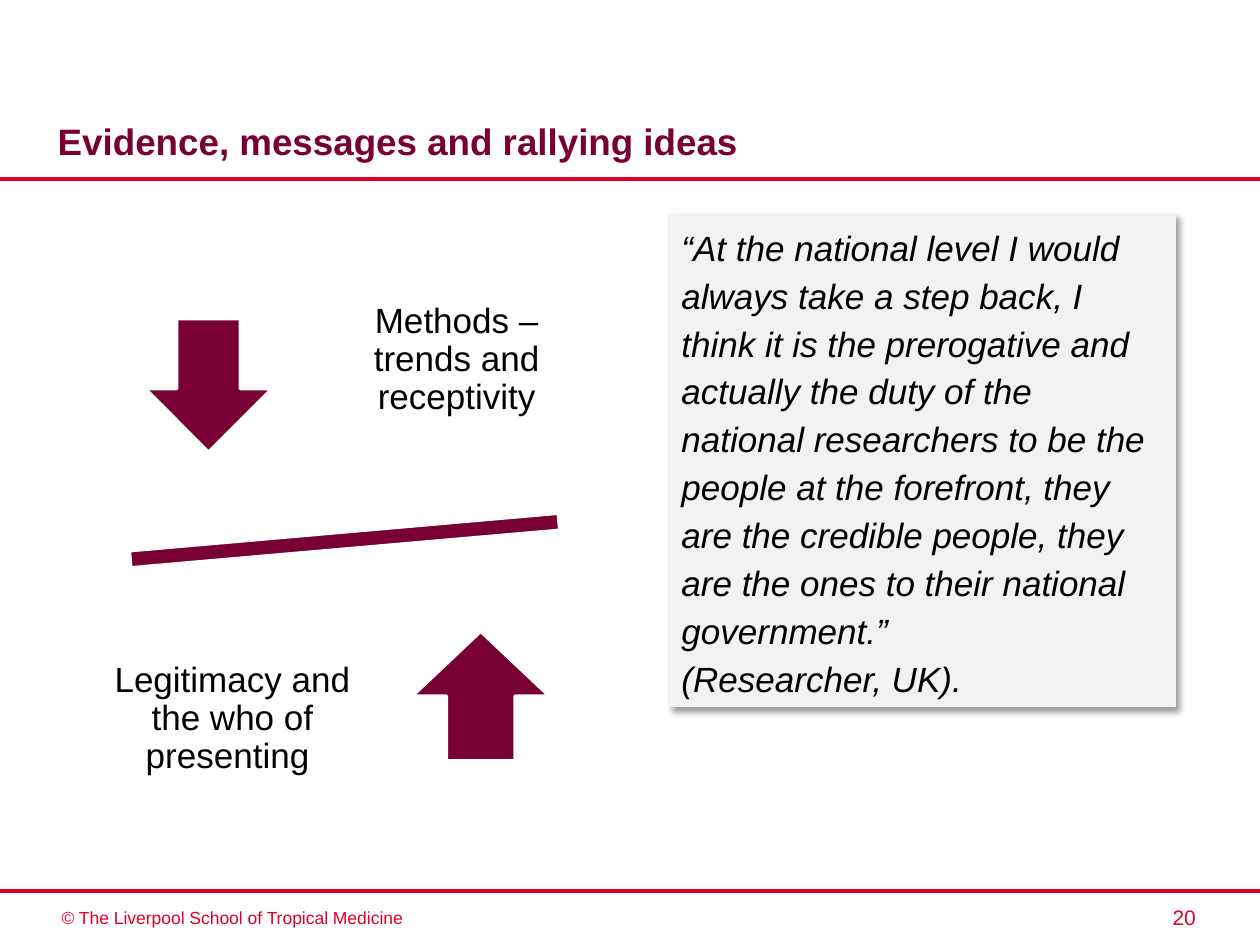
from lxml import etree
from pptx import Presentation, util as u
from pptx.dml.color import RGBColor
from pptx.enum import shapes, text
from pptx.oxml import parse_xml
from pptx.oxml.ns import nsdecls, qn

COLOURS = {"red": "DC002E", "maroon": "790033", "panel": "F2F2F2", "white": "FFFFFF", "black": "000000"}
COLUMNS, ROWS = 10, 7.5

presentation = Presentation()
presentation.slide_width, presentation.slide_height = u.Inches(10), u.Inches(7.5)
column = presentation.slide_width / COLUMNS
row = presentation.slide_height / ROWS
slide = presentation.slides.add_slide(presentation.slide_layouts[6])


def place(left, top, width, height):
    return [int(left * column), int(top * row), int(width * column), int(height * row)]


def write(shape, lines, size, colour, inset=(0.1, 0.05), anchor="TOP", align="LEFT", spacing=None, **style):
    frame = shape.text_frame
    frame.word_wrap = True
    frame.vertical_anchor = text.MSO_ANCHOR[anchor]
    for side, margin in zip(("left", "right", "top", "bottom"), (inset[0], inset[0], inset[1], inset[1])):
        setattr(frame, f"margin_{side}", u.Inches(margin))
    frame.text = "\n".join(lines)
    for paragraph in frame.paragraphs:
        paragraph.alignment = text.PP_ALIGN[align]
        paragraph.line_spacing = spacing
        paragraph.font.color.rgb = RGBColor.from_string(COLOURS[colour])
        for name, value in {"name": "Arial", "size": u.Pt(size), **style}.items():
            setattr(paragraph.font, name, value)


for level in (1.42, 7.07):
    left, top, width, _ = place(0, level, COLUMNS, 0)
    rule = slide.shapes.add_connector(shapes.MSO_CONNECTOR.STRAIGHT, left, top, left + width, top)
    rule.line.color.rgb = RGBColor.from_string(COLOURS["red"])
    rule.line.width = u.Pt(2.25)
    etree.SubElement(rule._element.spPr, qn("a:effectLst"))

balance = {"inset": (0.16, 0.16), "anchor": "MIDDLE", "align": "CENTER", "spacing": 0.9}
labels = [
    ((7.76, 7.13, 1.83, 0.3), "20", 12, "red", {"align": "RIGHT"}),
    ((0.39, 7.15, 3.95, 0.27), "© The Liverpool School of Tropical Medicine", 10, "red", {}),
    ((0.36, 0.67, 7.08, 0.67), "Evidence, messages and rallying ideas", 21, "maroon", {"anchor": "BOTTOM", "bold": True}),
    ((2.41, 1.83, 2.43, 2.06), "Methods – trends and receptivity", 20, "black", balance),
    ((0.59, 4.68, 2.51, 2.06), "Legitimacy and the who of presenting ", 20, "black", balance),
]
for area, wording, size, colour, style in labels:
    write(slide.shapes.add_textbox(*place(*area)), [wording], size, colour, **style)

blocks = [
    ("RECTANGLE", (5.31, 1.7, 4.02, 3.91), 0, "panel", "panel", 0.75),
    ("MATH_MINUS", (0.41, 4, 4.65, 0.58), 355, "maroon", "white", 2),
    ("DOWN_ARROW", (1.15, 2.53, 1.01, 1.06), 0, "maroon", "white", 2),
    ("UP_ARROW", (3.27, 5.01, 1.09, 1.03), 0, "maroon", "white", 2),
]
drawn = {}
for kind, area, rotation, fill, line, weight in blocks:
    shape = slide.shapes.add_shape(shapes.MSO_SHAPE[kind], *place(*area))
    shape.rotation = rotation
    shape.shadow.inherit = False
    shape.fill.solid()
    shape.fill.fore_color.rgb = RGBColor.from_string(COLOURS[fill])
    shape.line.color.rgb = RGBColor.from_string(COLOURS[line])
    shape.line.width = u.Pt(weight)
    drawn[kind] = shape

quote = drawn["RECTANGLE"]
quote._element.spPr.find(qn("a:effectLst")).append(parse_xml(
    f'<a:outerShdw {nsdecls("a")} blurRad="{u.Pt(4)}" dist="{u.Pt(3)}" dir="{45 * 60000}" algn="tl" rotWithShape="0">'
    f'<a:srgbClr val="{COLOURS["black"]}"><a:alpha val="40000"/></a:srgbClr></a:outerShdw>'))
write(quote, [
    "“At the national level I would always take a step back, I think it is the prerogative and "
    "actually the duty of the national researchers to be the people at the forefront, they are "
    "the credible people, they are the ones to their national government.”",
    "(Researcher, UK).",
], 20, "black", spacing=1.14, italic=True)

presentation.save("out.pptx")
